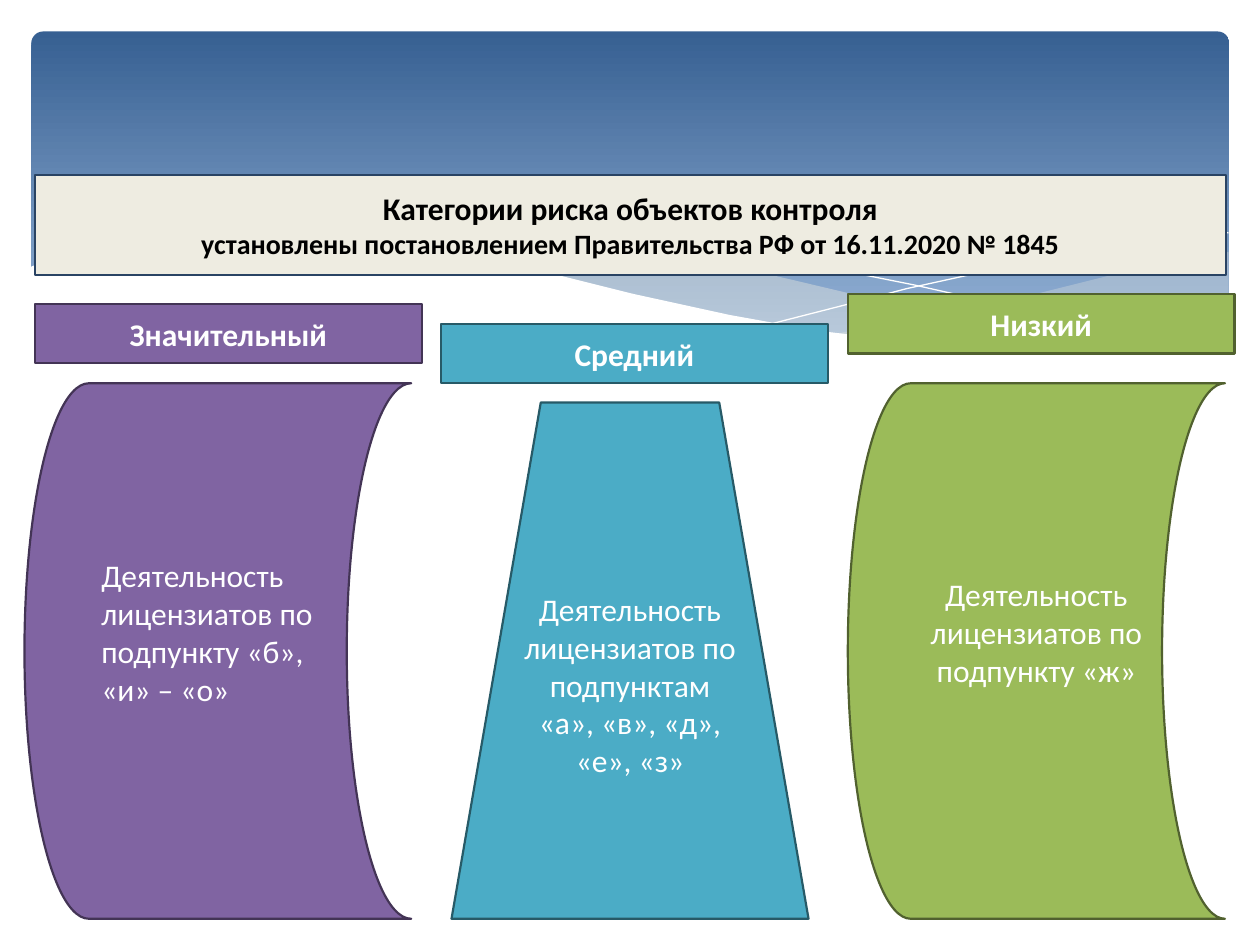
from lxml import etree
from pptx import Presentation
from pptx.dml.color import RGBColor
from pptx.enum.shapes import MSO_SHAPE
from pptx.enum.text import MSO_ANCHOR, PP_ALIGN
from pptx.oxml.ns import qn
from pptx.util import Pt

RECT, TRAPEZOID = MSO_SHAPE.RECTANGLE, MSO_SHAPE.TRAPEZOID
STORAGE, ROUNDED = MSO_SHAPE.FLOWCHART_STORED_DATA, MSO_SHAPE.ROUNDED_RECTANGLE
CENTER, LEFT, MIDDLE = PP_ALIGN.CENTER, PP_ALIGN.LEFT, MSO_ANCHOR.MIDDLE

WHITE, CREAM = "FFFFFF", "EEECE1"
PURPLE, TEAL, GREEN = ("8064A2", "433455"), ("4BACC6", "275A67"), ("9BBB59", "51612F")
BOTTOM = 525

HEADING = [("Категории риска объектов контроля", 18),
           ("установлены постановлением Правительства РФ от 16.11.2020 № 1845", 16)]
HEADING_BOX = (20, 100, 680.5, 57)
LABEL_SIZE = (221, 34)

# label, its left and top, colours, body shape, its left, top and width, alignment, paragraphs
CATEGORIES = [
    ("Средний", (252, 185), TEAL, TRAPEZOID, (258, 230, 204), CENTER,
     ["Деятельность лицензиатов по подпунктам «а», «в», «д», «е», «з»"]),
    ("Низкий", (484.5, 168), GREEN, STORAGE, (484.5, 219, 215.5), CENTER,
     ["Деятельность лицензиатов по подпункту «ж»"]),
    ("Значительный", (20, 173.5), PURPLE, STORAGE, (14, 219, 221), LEFT,
     ["Деятельность лицензиатов по подпункту «б»,", "«и» – «о»"]),
]

# opacity in percent, outline
BANDS = [
    (29, [(702, 144), (683, 147), (652, 153), (620, 161), (580, 171), (542, 179),
          (508, 185), (476, 191), (508, 195), (545, 199), (578, 200), (608, 199),
          (634, 197), (657, 193), (678, 187), (702, 178)]),
    (40, [(643, 197), (603, 191), (558, 183), (508, 173), (453, 160), (410, 150),
          (370, 143), (335, 138), (302, 134), (260, 133), (225, 135), (206, 138),
          (246, 143), (291, 152), (323, 160), (382, 173), (433, 184), (479, 192),
          (520, 197), (557, 199.5), (589, 200), (617, 199)]),
]
WAVE = [(703.5, 177), (684, 184), (662, 191), (639, 195), (612, 198), (582, 199.5),
        (548, 198), (510, 194), (467, 189), (417, 180), (362, 168), (322, 158),
        (282, 149), (245, 142), (195, 135), (139, 132), (95, 134), (61, 139),
        (33, 146), (16.5, 153), (16.5, 237), (703.5, 237)]
CURVES = [
    [(222, 140), (254, 136), (300, 134.5), (352, 137), (400, 142), (458, 150),
     (523, 163), (572, 174), (626, 188), (653, 196)],
    [(441, 185), (484, 174), (518, 165), (559, 156), (602, 147), (644, 140),
     (675, 135), (702, 133)],
]


def rgb(value):
    return RGBColor.from_string(value)


def paint(sp, fill=None, line=None, width=1.25):
    if fill:
        sp.fill.solid()
        sp.fill.fore_color.rgb = rgb(fill)
    else:
        sp.fill.background()
    if line:
        sp.line.color.rgb = rgb(line)
        sp.line.width = Pt(width)
    else:
        sp.line.fill.background()


def add_shape(slide, kind, box):
    sp = slide.shapes.add_shape(kind, *map(Pt, box))
    sp.shadow.inherit = False
    return sp


def add_path(slide, points, close):
    start, *rest = [(Pt(x), Pt(y)) for x, y in points]
    builder = slide.shapes.build_freeform(*start)
    builder.add_line_segments(rest, close=close)
    sp = builder.convert_to_shape()
    sp.shadow.inherit = False
    return sp


def write(sp, lines, color, bold, align=CENTER, bottom=3.6):
    """Fill a shape with (text, size) paragraphs."""
    tf = sp.text_frame
    frame = {"word_wrap": True, "vertical_anchor": MIDDLE, "margin_bottom": Pt(bottom)}
    for name, value in frame.items():
        setattr(tf, name, value)
    for i, (text, size) in enumerate(lines):
        p = tf.add_paragraph() if i else tf.paragraphs[0]
        p.alignment = align
        r = p.add_run()
        r.text = text
        for name, value in {"name": "Calibri", "size": Pt(size), "bold": bold}.items():
            setattr(r.font, name, value)
        r.font.color.rgb = rgb(color)


def add_backdrop(slide):
    panel = add_shape(slide, ROUNDED, (18, 18, 684.5, 194.5))
    panel.adjustments[0] = 0.034
    panel.line.fill.background()
    panel.fill.gradient()
    panel.fill.gradient_angle = 270
    for stop, (position, color) in zip(panel.fill.gradient_stops,
                                       [(0, "376092"), (0.9, "95B3D7")]):
        stop.position = position
        stop.color.rgb = rgb(color)
    for opacity, points in BANDS:
        band = add_path(slide, points, True)
        paint(band, CREAM)
        color = band._element.spPr.find(qn("a:solidFill"))[0]
        etree.SubElement(color, qn("a:alpha"), val=str(opacity * 1000))
    for points in CURVES:
        paint(add_path(slide, points, False), line=WHITE, width=0)
    paint(add_path(slide, WAVE, True), WHITE)


def add_heading(slide):
    title = slide.shapes.title
    for name, value in zip(("left", "top", "width", "height"), HEADING_BOX):
        setattr(title, name, Pt(value))
    paint(title, CREAM, "294363")
    write(title, HEADING, "000000", True)
    slide.shapes._spTree.append(title._element)  # in front of the backdrop


def add_category(slide, label, corner, colors, kind, place, align, lines):
    tag = add_shape(slide, RECT, corner + LABEL_SIZE)
    paint(tag, *colors)
    write(tag, [(label, 18)], WHITE, True)
    left, top, width = place
    body = add_shape(slide, kind, (left, top, width, BOTTOM - top))
    paint(body, *colors)
    write(body, [(text, 18) for text in lines], WHITE, False, align, bottom=25.5)


def main():
    prs = Presentation()
    prs.slide_width, prs.slide_height = Pt(720), Pt(540)
    slide = prs.slides.add_slide(prs.slide_layouts[5])
    add_backdrop(slide)
    add_heading(slide)
    for category in CATEGORIES:
        add_category(slide, *category)
    prs.save("out.pptx")


if __name__ == "__main__":
    main()
